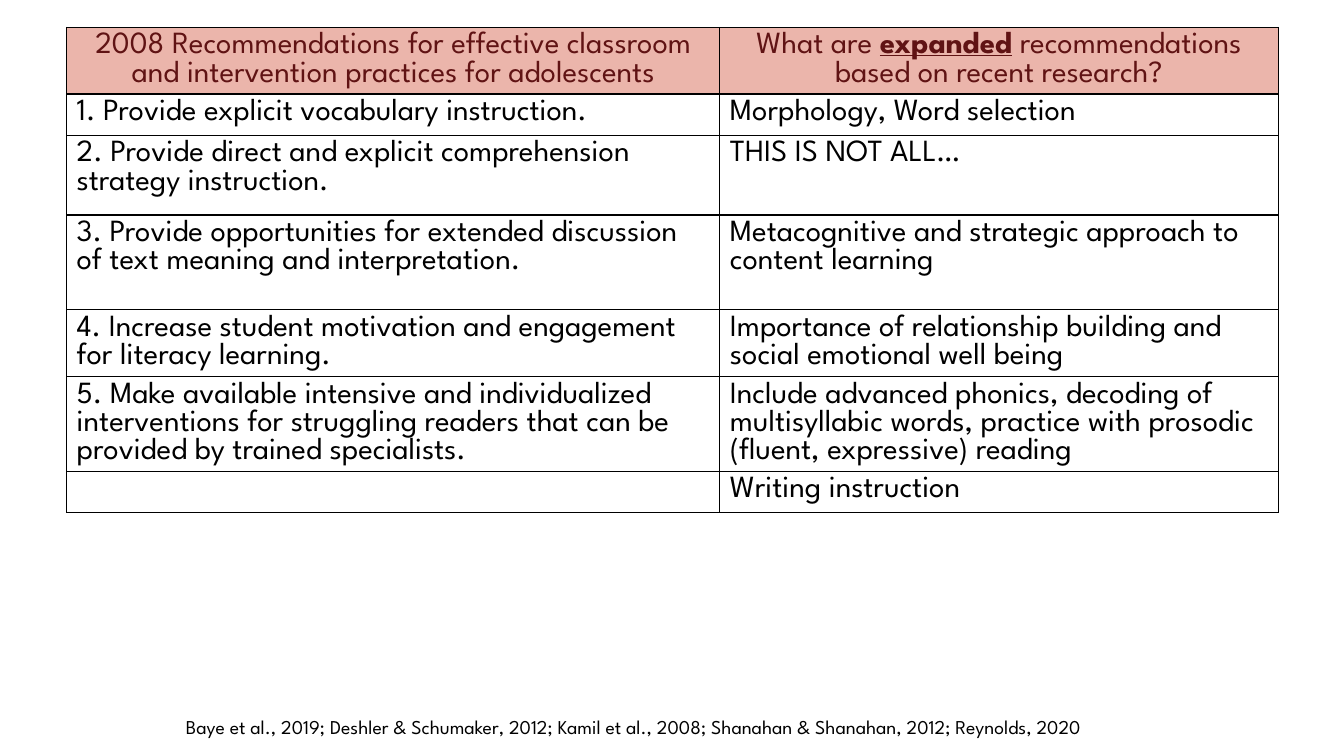
"""Build a slide comparing reading recommendations with recent research."""
from dataclasses import dataclass

from lxml import etree
from pptx import Presentation
from pptx.dml.color import RGBColor
from pptx.enum.text import PP_ALIGN
from pptx.oxml.ns import qn
from pptx.util import Cm, Pt

LEFT, CENTER = PP_ALIGN.LEFT, PP_ALIGN.CENTER
BLANK = 6


@dataclass(frozen=True)
class Theme:
    """Hold the colours, font and sizes of the slide."""
    font: str = "League Spartan"
    ink: str = "000000"
    wine: str = "601314"
    rose: str = "EBB5AB"
    grid: str = "000000"
    body: int = 22
    note: int = 14
    rule: int = 1


THEME = Theme()
WIDTHS = (16.46, 14.07)
HEIGHTS = (1.68, 1.04, 2.01, 2.39, 1.68, 2.39, 1.04)
HEADS = (
    ["2008 Recommendations for effective classroom and intervention practices for adolescents"],
    ["What are ", "*expanded", " recommendations based on recent research?"],
)
ROWS = (
    ("1. Provide explicit vocabulary instruction.",
     "Morphology, Word selection"),
    ("2. Provide direct and explicit comprehension strategy instruction.",
     "THIS IS NOT ALL…"),
    ("3. Provide opportunities for extended discussion of text meaning and interpretation.",
     "Metacognitive and strategic approach to content learning"),
    ("4. Increase student motivation and engagement for literacy learning.",
     "Importance of relationship building and social emotional well being"),
    ("5. Make available intensive and individualized interventions for struggling readers "
     "that can be provided by trained specialists.",
     "Include advanced phonics, decoding of multisyllabic words, practice with prosodic "
     "(fluent, expressive) reading"),
    ("", "Writing instruction"),
)
CITES = ("Baye et al., 2019; Deshler & Schumaker, 2012; Kamil et al., 2008; "
         "Shanahan & Shanahan, 2012; Reynolds, 2020")


def write(frame, parts, size, color, align=LEFT):
    """Write runs into the first paragraph, with a star marking emphasis."""
    para = frame.paragraphs[0]
    para.alignment = align
    for part in filter(None, parts):
        run = para.add_run()
        run.text = part.removeprefix("*")
        font = run.font
        font.name, font.size = THEME.font, Pt(size)
        font.color.rgb = RGBColor.from_string(color)
        font.bold = font.underline = part.startswith("*")
    return para


def border(cell):
    """Draw a thin line on all four sides of a cell."""
    props = cell._tc.get_or_add_tcPr()
    for spot, side in enumerate(("a:lnL", "a:lnR", "a:lnT", "a:lnB")):
        line = etree.Element(qn(side), w=str(Pt(THEME.rule)))
        fill = etree.SubElement(line, qn("a:solidFill"))
        etree.SubElement(fill, qn("a:srgbClr"), val=THEME.grid)
        props.insert(spot, line)


def add_grid(slide):
    """Add the table with its header and body rows."""
    rows = [HEADS] + [[[text] for text in row] for row in ROWS]
    table = slide.shapes.add_table(
        len(rows), len(WIDTHS), Cm(1.68), Cm(0.69),
        Cm(sum(WIDTHS)), Cm(sum(HEIGHTS))).table
    table.horz_banding = False
    for col, width in zip(table.columns, WIDTHS):
        col.width = Cm(width)
    for index, (row, height, texts) in enumerate(zip(table.rows, HEIGHTS, rows)):
        row.height = Cm(height)
        for cell, parts in zip(row.cells, texts):
            if index == 0:
                cell.fill.solid()
                cell.fill.fore_color.rgb = RGBColor.from_string(THEME.rose)
                write(cell.text_frame, parts, THEME.body, THEME.wine, CENTER)
            else:
                cell.fill.background()
                write(cell.text_frame, parts, THEME.body, THEME.ink)
            border(cell)


def add_note(slide):
    """Add the line of citations at the foot."""
    box = slide.shapes.add_textbox(Cm(0.03), Cm(17.88), Cm(31.27), Cm(1.15))
    frame = box.text_frame
    frame.word_wrap = True
    para = write(frame, [CITES], THEME.note, THEME.ink, CENTER)
    props = para._p.get_or_add_pPr()
    props.set("marL", str(Cm(1.27)))
    props.set("indent", str(Cm(-0.64)))


def main():
    """Build and save the slide."""
    deck = Presentation()
    deck.slide_width, deck.slide_height = Cm(33.87), Cm(19.05)
    slide = deck.slides.add_slide(deck.slide_layouts[BLANK])
    add_grid(slide)
    add_note(slide)
    deck.save("out.pptx")


if __name__ == "__main__":
    main()
